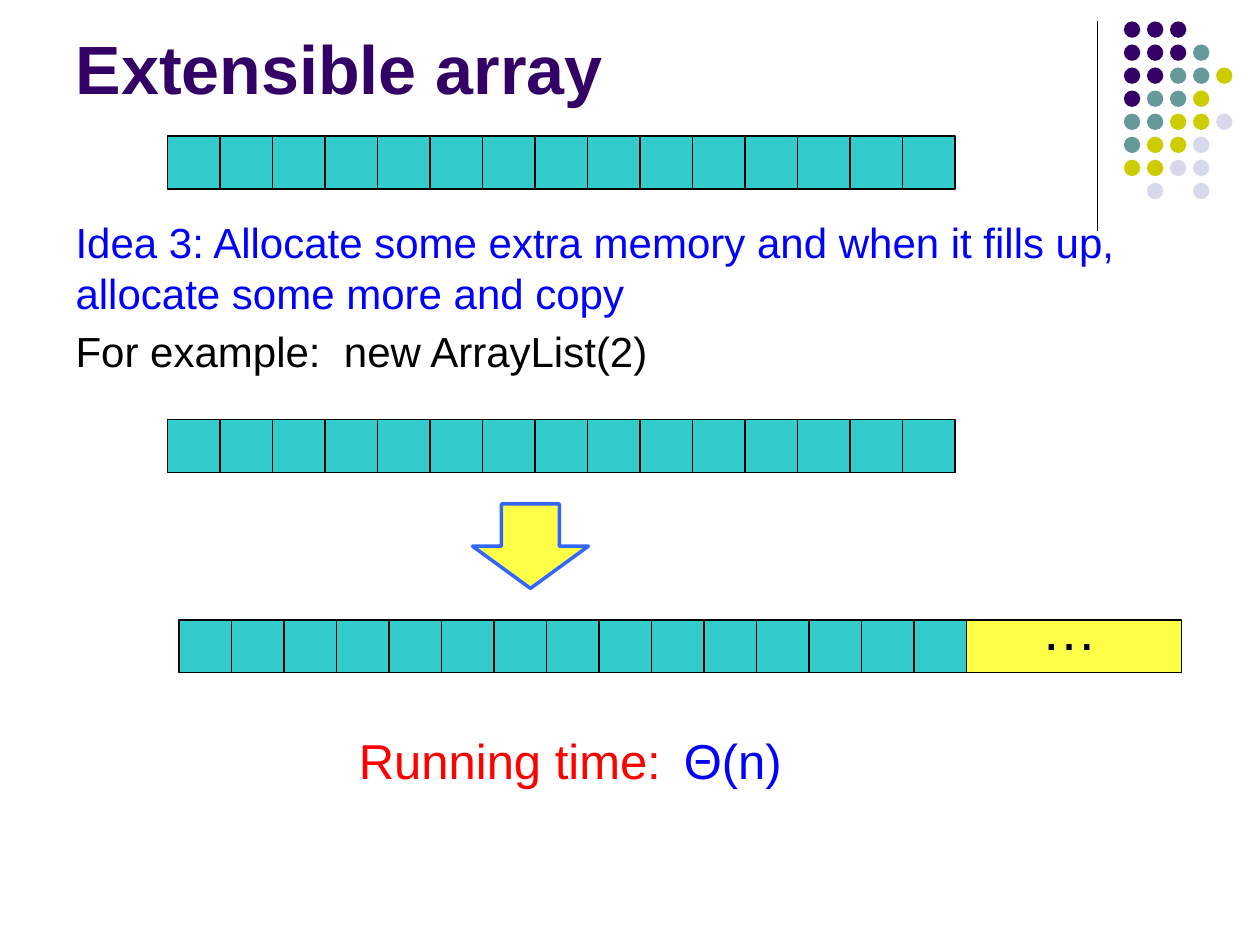
from dataclasses import dataclass

from lxml.etree import SubElement
from pptx import Presentation
from pptx.dml.color import RGBColor
from pptx.enum.shapes import MSO_CONNECTOR, MSO_SHAPE
from pptx.enum.text import MSO_ANCHOR, MSO_AUTO_SIZE, PP_ALIGN
from pptx.oxml.ns import qn
from pptx.util import Inches, Pt


@dataclass(frozen=True)
class Theme:
    font: str = "Arial"
    purple: str = "330066"
    teal: str = "669999"
    olive: str = "CCCC00"
    lilac: str = "D8D8EC"
    cell: str = "33CCCC"
    extra: str = "FFFF47"
    arrow: str = "3366FF"
    black: str = "000000"
    blue: str = "0000FF"
    red: str = "FF0000"
    title_size: float = 39
    body_size: float = 24
    label_size: float = 28
    dots_size: float = 32
    thin: float = 0.75
    thick: float = 2


THEME = Theme()
CELLS = 15
ARRAY_W, ARRAY_H = 6.25, 0.42
DOT_ROWS = ["PPP", "PPPT", "PPTTO", "PTTO", "TTOOL", "TOOL", "OOLL", " L L"]
DOT_COLORS = {"P": THEME.purple, "T": THEME.teal, "O": THEME.olive, "L": THEME.lilac}


def rgb(color):
    return RGBColor.from_string(color)


def add_run(p, text, size, color, bold=False):
    r = p.add_run()
    r.text = text
    r.font.name = THEME.font
    r.font.size = Pt(size)
    r.font.bold = bold
    r.font.color.rgb = rgb(color)


def add_shape(shapes, kind, x, y, w, h, fill, line=None, weight=THEME.thin):
    sp = shapes.add_shape(kind, Inches(x), Inches(y), Inches(w), Inches(h))
    sp.shadow.inherit = False
    sp.fill.solid()
    sp.fill.fore_color.rgb = rgb(fill)
    if line:
        sp.line.color.rgb = rgb(line)
        sp.line.width = Pt(weight)
    else:
        sp.line.fill.background()


def add_vertical(shapes, x, top, bottom):
    ln = shapes.add_connector(
        MSO_CONNECTOR.STRAIGHT, Inches(x), Inches(top), Inches(x), Inches(bottom))
    ln.line.color.rgb = rgb(THEME.black)
    ln.line.width = Pt(THEME.thin)
    SubElement(ln._element.spPr, qn("a:effectLst"))


def add_label(s, text, x, y, w, h, size, color):
    tb = s.shapes.add_textbox(Inches(x), Inches(y), Inches(w), Inches(h))
    tf = tb.text_frame
    tf.word_wrap = True
    tf.auto_size = MSO_AUTO_SIZE.SHAPE_TO_FIT_TEXT
    add_run(tf.paragraphs[0], text, size, color)


def place(ph, x, y, w, h, anchor):
    ph.left, ph.top, ph.width, ph.height = (Inches(v) for v in (x, y, w, h))
    tf = ph.text_frame
    tf.word_wrap = True
    tf.auto_size = MSO_AUTO_SIZE.NONE
    tf.vertical_anchor = anchor
    return tf


def add_ornament(s, x, y, pitch=0.183, size=0.13):
    add_vertical(s.shapes, x, y, y + 1.66)
    group = s.shapes.add_group_shape()
    for row, codes in enumerate(DOT_ROWS):
        for col, code in enumerate(codes):
            if code in DOT_COLORS:
                add_shape(group.shapes, MSO_SHAPE.OVAL, x + 0.21 + col * pitch,
                          y + row * pitch, size, size, DOT_COLORS[code])


def add_title(s, x, y, w, h):
    tf = place(s.shapes.title, x, y, w, h, MSO_ANCHOR.BOTTOM)
    p = tf.paragraphs[0]
    p.alignment = PP_ALIGN.LEFT
    add_run(p, "Extensible array", THEME.title_size, THEME.purple, bold=True)


def add_body(s, x, y, w, h):
    tf = place(s.placeholders[1], x, y, w, h, MSO_ANCHOR.TOP)
    lines = [
        ("Idea 3: Allocate some extra memory and when it fills up, "
         "allocate some more and copy", THEME.blue),
        ("For example:  new ArrayList(2)", THEME.black),
    ]
    for i, (text, color) in enumerate(lines):
        p = tf.add_paragraph() if i else tf.paragraphs[0]
        p.space_before = Pt(THEME.body_size * 0.2)
        pPr = p._p.get_or_add_pPr()
        pPr.set("marL", "0")
        pPr.set("indent", "0")
        SubElement(pPr, qn("a:buNone"))
        add_run(p, text, THEME.body_size, color)


def add_array(s, x, y, w=ARRAY_W, h=ARRAY_H):
    group = s.shapes.add_group_shape()
    add_shape(group.shapes, MSO_SHAPE.RECTANGLE, x, y, w, h, THEME.cell, THEME.black)
    for i in range(1, CELLS):
        add_vertical(group.shapes, x + i * w / CELLS, y, y + h)


def add_grown_array(s, x, y):
    add_array(s, x, y)
    add_shape(s.shapes, MSO_SHAPE.RECTANGLE, x + ARRAY_W, y, 1.71, ARRAY_H,
              THEME.extra, THEME.black)
    add_label(s, "…", x + ARRAY_W + 0.5, y - 0.25, 0.75, 0.64,
              THEME.dots_size, THEME.black)


def add_running_time(s, x, y, h):
    add_label(s, "Running time:", x, y, 2.67, h, THEME.label_size, THEME.red)
    add_label(s, "Θ(n)", x + 2.58, y, 1, h, THEME.label_size, THEME.blue)


def main():
    prs = Presentation()
    prs.slide_width, prs.slide_height = Inches(10), Inches(7.5)
    s = prs.slides.add_slide(prs.slide_layouts[1])
    add_ornament(s, 8.71, 0.17)
    add_title(s, 0.5, 0.13, 8.25, 0.78)
    add_body(s, 0.5, 1.67, 9.08, 1.95)
    add_array(s, 1.33, 1.08)
    add_array(s, 1.33, 3.33)
    add_grown_array(s, 1.42, 4.92)
    add_shape(s.shapes, MSO_SHAPE.DOWN_ARROW, 3.75, 4, 0.92, 0.67,
              THEME.extra, THEME.arrow, THEME.thick)
    add_running_time(s, 2.75, 5.75, 0.57)
    prs.save("out.pptx")


if __name__ == "__main__":
    main()
